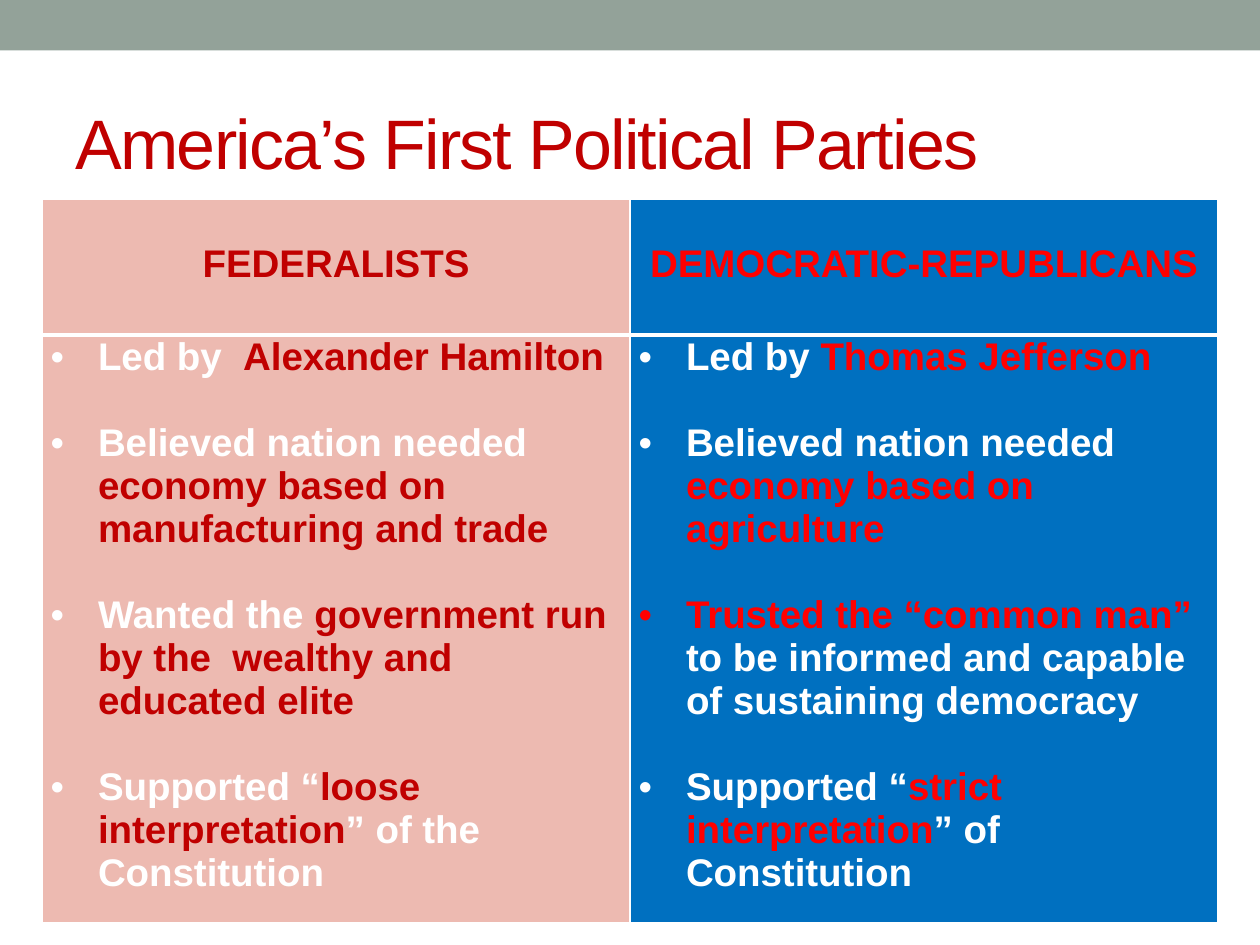
from lxml import etree
from pptx import Presentation
from pptx.dml.color import RGBColor
from pptx.enum.shapes import MSO_SHAPE
from pptx.enum.text import MSO_ANCHOR, PP_ALIGN
from pptx.oxml.ns import qn
from pptx.util import Pt

RECT = MSO_SHAPE.RECTANGLE
MIDDLE = MSO_ANCHOR.MIDDLE
LEFT, CENTER = PP_ALIGN.LEFT, PP_ALIGN.CENTER

WHITE = RGBColor(0xFF, 0xFF, 0xFF)
SAGE = RGBColor(0x93, 0xA2, 0x99)
CRIMSON = RGBColor(0xC0, 0x00, 0x00)
RED = RGBColor(0xFF, 0x00, 0x00)
PINK = RGBColor(0xED, 0xBA, 0xB1)
BLUE = RGBColor(0x00, 0x70, 0xC0)

FONT = "Arial"
SIZE = 22
LINE = 24.6
INDENT = 27

PARTIES = [
    ("FEDERALISTS", PINK, CRIMSON, [
        [("Led by  ", WHITE), ("Alexander Hamilton", CRIMSON)],
        [("Believed nation needed ", WHITE),
         ("economy based on manufacturing and trade", CRIMSON)],
        [("Wanted the ", WHITE),
         ("government run by the  wealthy and educated elite", CRIMSON)],
        [("Supported “", WHITE), ("loose interpretation", CRIMSON),
         ("” of the Constitution", WHITE)],
    ]),
    ("DEMOCRATIC-REPUBLICANS", BLUE, RED, [
        [("Led by ", WHITE), ("Thomas Jefferson", RED)],
        [("Believed nation needed ", WHITE),
         ("economy based on agriculture", RED)],
        [("Trusted the “common man” ", RED),
         ("to be informed and capable of sustaining democracy", WHITE)],
        [("Supported “", WHITE), ("strict interpretation", RED),
         ("” of Constitution", WHITE)],
    ]),
]


def add_run(para, text, color, size=SIZE, bold=True):
    run = para.add_run()
    run.text = text
    font = run.font
    font.name, font.size, font.bold = FONT, Pt(size), bold
    font.color.rgb = color
    return run


def add_bar(slide):
    bar = slide.shapes.add_shape(RECT, 0, 0, Pt(720), Pt(28.8))
    bar.shadow.inherit = False
    bar.fill.solid()
    bar.fill.fore_color.rgb = SAGE
    bar.line.fill.background()
    slide.shapes._spTree.insert(2, bar._element)


def set_title(slide, text):
    title = slide.shapes.title
    title.left, title.top = Pt(36), Pt(42)
    title.width, title.height = Pt(648), Pt(77.5)
    frame = title.text_frame
    frame.vertical_anchor = MIDDLE
    para = frame.paragraphs[0]
    para.alignment = LEFT
    run = add_run(para, text, CRIMSON, 40, False)
    run.font._element.set("spc", "-100")


def set_edges(cell, top, bottom):
    props = cell._tc.get_or_add_tcPr()
    edges = [("a:lnL", 1), ("a:lnR", 1), ("a:lnT", top), ("a:lnB", bottom)]
    for spot, (tag, width) in enumerate(edges):
        edge = etree.Element(qn(tag), w=str(Pt(width)))
        fill = etree.SubElement(edge, qn("a:solidFill"))
        etree.SubElement(fill, qn("a:srgbClr"), val=str(WHITE))
        props.insert(spot, edge)


def style_cell(cell, fill, pad, top, bottom):
    cell.margin_left = cell.margin_right = Pt(5)
    cell.margin_top, cell.margin_bottom = Pt(pad), 0
    cell.fill.solid()
    cell.fill.fore_color.rgb = fill
    set_edges(cell, top, bottom)


def set_bullet(para):
    props = para._p.get_or_add_pPr()
    props.set("marL", str(Pt(INDENT)))
    props.set("indent", str(-Pt(INDENT)))
    etree.SubElement(props, qn("a:buFont"), typeface=FONT)
    etree.SubElement(props, qn("a:buChar"), char="•")


def fill_list(cell, points):
    frame = cell.text_frame
    for index, runs in enumerate(points):
        para = frame.add_paragraph() if index else frame.paragraphs[0]
        para.space_before = Pt(LINE if index else 0)
        set_bullet(para)
        for text, color in runs:
            add_run(para, text, color)


def add_grid(slide):
    frame = slide.shapes.add_table(
        2, len(PARTIES), Pt(24), Pt(114), Pt(672), Pt(413.5))
    table = frame.table
    table.rows[0].height, table.rows[1].height = Pt(77.5), Pt(336)
    for col, (name, fill, color, points) in enumerate(PARTIES):
        head, body = table.cell(0, col), table.cell(1, col)
        style_cell(head, fill, LINE, 1, 3)
        style_cell(body, fill, 0, 3, 1)
        para = head.text_frame.paragraphs[0]
        para.alignment = CENTER
        add_run(para, name, color)
        fill_list(body, points)


def main():
    deck = Presentation()
    deck.slide_width, deck.slide_height = Pt(720), Pt(540)
    slide = deck.slides.add_slide(deck.slide_layouts[5])
    add_bar(slide)
    set_title(slide, "America’s First Political Parties")
    add_grid(slide)
    deck.save("out.pptx")


if __name__ == "__main__":
    main()
